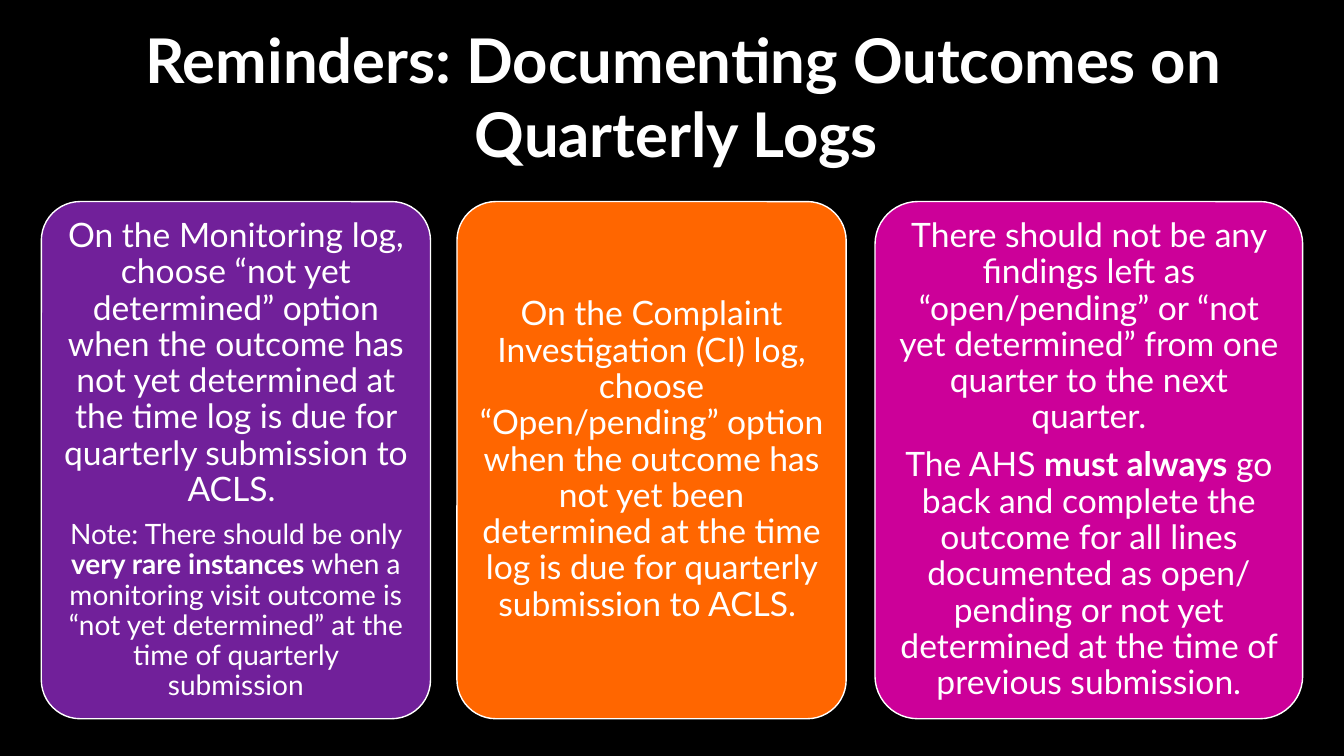
from pptx import Presentation
from pptx import util as u
from pptx.dml import color
from pptx.enum import shapes, text

COLORS = {
    "background": "000000",
    "white": "FFFFFF",
    "purple": "71209A",
    "orange": "FF6600",
    "magenta": "CC0099",
}
FONT = "Lato"
CARD_TOP, CARD_HEIGHT = 144, 369.4


def rgb(name):
    return color.RGBColor.from_string(COLORS[name])


def add_span(para, words, size, bold):
    span = para.add_run()
    span.text = words
    span.font.name = FONT
    span.font.size = u.Pt(size)
    span.font.bold = bold
    span.font.color.rgb = rgb("white")


deck = Presentation()
deck.slide_width, deck.slide_height = u.Pt(960), u.Pt(540)
page = deck.slides.add_slide(deck.slide_layouts[6])
page.background.fill.solid()
page.background.fill.fore_color.rgb = rgb("background")

title = page.shapes.add_textbox(u.Pt(65.5), u.Pt(12.2), u.Pt(846), u.Pt(113.8))
title.text_frame.word_wrap = True
title.text_frame.auto_size = text.MSO_AUTO_SIZE.SHAPE_TO_FIT_TEXT
title_para = title.text_frame.paragraphs[0]
title_para.alignment = text.PP_ALIGN.CENTER
add_span(title_para, "Reminders: Documenting Outcomes on Quarterly Logs ", 44, True)

cards = [
    ("purple", 29.5, 278, [
        (24, [("On the Monitoring log, choose “not yet determined” option when the "
               "outcome has not yet determined at the time log is due for quarterly "
               "submission to ACLS. ", False)]),
        (20, [("Note: There should be only ", False),
              ("very rare instances ", True),
              ("when a monitoring visit outcome is “not yet determined” at the time "
               "of quarterly submission", False)]),
    ]),
    ("orange", 326.4, 278, [
        (24, [("On the Complaint Investigation (CI) log, choose “Open/pending” option "
               "when the outcome has not yet been determined at the time log is due "
               "for quarterly submission to ACLS. ", False)]),
    ]),
    ("magenta", 625, 305.5, [
        (24, [("There should not be any findings left as “open/pending” or “not yet "
               "determined” from one quarter to the next quarter.", False)]),
        (24, [("The AHS ", False),
              ("must always", True),
              (" go back and complete the outcome for all lines documented as open/ "
               "pending or not yet determined at the time of previous submission.",
               False)]),
    ]),
]

for fill, left, width, paragraphs in cards:
    card = page.shapes.add_shape(
        shapes.MSO_SHAPE.ROUNDED_RECTANGLE,
        u.Pt(left), u.Pt(CARD_TOP), u.Pt(width), u.Pt(CARD_HEIGHT))
    card.adjustments[0] = 0.1
    card.shadow.inherit = False
    card.fill.solid()
    card.fill.fore_color.rgb = rgb(fill)
    card.line.color.rgb = rgb("white")
    card.line.width = u.Pt(1)

    frame = card.text_frame
    frame.word_wrap = True
    frame.vertical_anchor = text.MSO_ANCHOR.MIDDLE
    frame.margin_left = frame.margin_right = u.Pt(7)
    frame.margin_top = frame.margin_bottom = u.Pt(7)
    for index, (size, spans) in enumerate(paragraphs):
        para = frame.add_paragraph() if index else frame.paragraphs[0]
        para.alignment = text.PP_ALIGN.CENTER
        para.line_spacing = 0.9
        para.space_after = u.Pt(size * 0.35)
        for words, bold in spans:
            add_span(para, words, size, bold)

deck.save("out.pptx")
